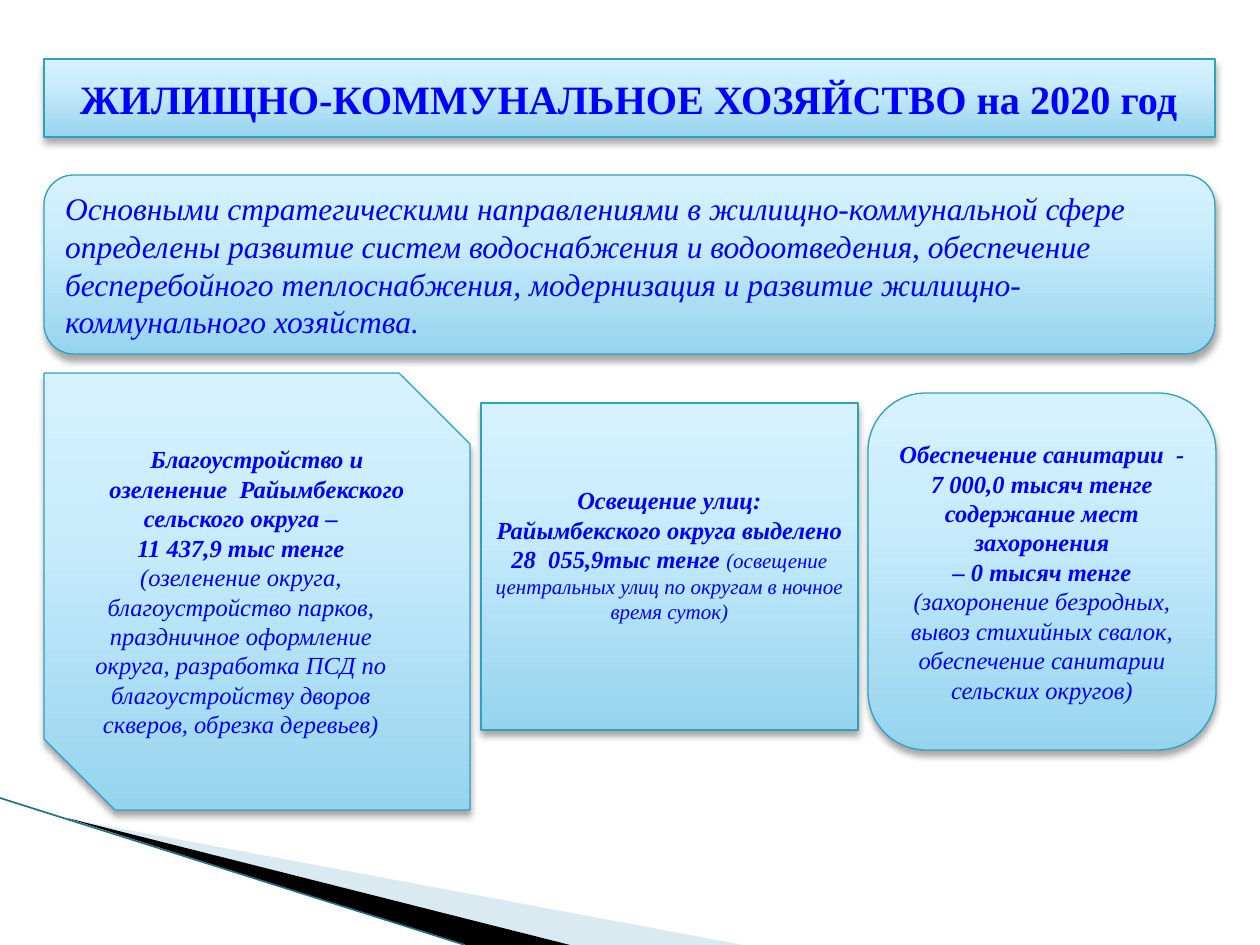
"""Build the slide on housing and communal services for 2020."""
from copy import deepcopy
from dataclasses import dataclass

from lxml.etree import SubElement
from pptx import Presentation
from pptx.dml.color import RGBColor
from pptx.enum.shapes import MSO_CONNECTOR, MSO_SHAPE
from pptx.enum.text import MSO_ANCHOR, PP_ALIGN
from pptx.oxml.ns import qn
from pptx.util import Emu, Pt

EMU_PER_PX = 914400 / 126


@dataclass(frozen=True)
class Theme:
    font: str = "Times New Roman"
    text: str = "0000FF"
    outline: str = "2DA2BF"
    gradient: tuple = ((0, "96D4EE"), (0.65, "C9ECFC"), (1, "D7F2FF"))
    shadow: str = "000000"
    light_wedge: str = "A0CBDC"
    dark_wedge: str = "000000"
    sweep_line: str = "1F7388"
    title: int = 23
    lead: int = 18
    body: int = 14
    note: int = 12


THEME = Theme()


@dataclass(frozen=True)
class Run:
    text: str
    size: int = THEME.body
    bold: bool = True
    italic: bool = True


@dataclass(frozen=True)
class Line:
    runs: tuple[Run, ...]
    right_indent: int = 0


@dataclass(frozen=True)
class Panel:
    preset: MSO_SHAPE
    left: int
    top: int
    width: int
    height: int
    lines: tuple[Line, ...]
    align: PP_ALIGN = PP_ALIGN.CENTER
    bottom_inset: int = 6


@dataclass(frozen=True)
class Wedge:
    points: tuple[tuple[int, int], ...]
    color: str
    opacity: int = 100


WEDGES = (
    Wedge(((69, 819), (743, 945), (570, 945)), THEME.light_wedge, 40),
    Wedge(((67, 818), (570, 945), (464, 945)), THEME.dark_wedge),
)

PANELS = (
    Panel(MSO_SHAPE.RECTANGLE, 44, 59, 1171, 78, (
        Line((Run("ЖИЛИЩНО-КОММУНАЛЬНОЕ ХОЗЯЙСТВО на 2020 год", THEME.title, italic=False),)),
    )),
    Panel(MSO_SHAPE.ROUNDED_RECTANGLE, 44, 175, 1171, 179, (
        Line((Run(
            "Основными стратегическими направлениями в жилищно-коммунальной сфере "
            "определены развитие систем водоснабжения и водоотведения, обеспечение "
            "бесперебойного теплоснабжения, модернизация и развитие "
            "жилищно-коммунального хозяйства.", THEME.lead, bold=False),)),
    ), PP_ALIGN.LEFT),
    Panel(MSO_SHAPE.RECTANGLE, 481, 403, 377, 327, (
        Line((Run("Освещение улиц:"),)),
        Line((
            Run("Райымбекского округа выделено 28  055,9тыс тенге "),
            Run("(освещение центральных улиц по округам в ночное время суток)",
                THEME.note, bold=False),
        )),
    ), bottom_inset=30),
    Panel(MSO_SHAPE.ROUNDED_RECTANGLE, 868, 393, 348, 357, (
        Line((Run("Обеспечение санитарии  - 7 000,0 тысяч тенге содержание мест захоронения"),)),
        Line((
            Run("– 0 тысяч тенге "),
            Run("(захоронение безродных, вывоз стихийных свалок, "
                "обеспечение санитарии сельских округов)", bold=False),
        )),
    )),
    Panel(MSO_SHAPE.SNIP_2_DIAG_RECTANGLE, 44, 373, 426, 437, (
        Line((Run("Благоустройство и озеленение  Райымбекского"),)),
        Line((Run("сельского округа –"),), right_indent=32),
        Line((Run("11 437,9 тыс тенге"),)),
        Line((Run(
            "(озеленение округа, благоустройство парков, праздничное оформление "
            "округа, разработка ПСД по благоустройству дворов скверов, "
            "обрезка деревьев)", bold=False),)),
    )),
)


def px(length: int) -> Emu:
    return Emu(round(length * EMU_PER_PX))


def add_text(paragraph, text: str, *, size: int, bold: bool, italic: bool) -> None:
    run = paragraph.add_run()
    run.text = text
    font = run.font
    font.name, font.size, font.bold, font.italic = THEME.font, Pt(size), bold, italic
    font.color.rgb = RGBColor.from_string(THEME.text)


def apply_gradient(shape) -> None:
    shape.fill.gradient()
    shape.fill.gradient_angle = 90
    stop_list = shape._element.spPr.find(".//" + qn("a:gsLst"))
    stop_list.append(deepcopy(stop_list[-1]))
    for stop, (position, color) in zip(shape.fill.gradient_stops, THEME.gradient):
        stop.position = position
        stop.color.rgb = RGBColor.from_string(color)


def apply_shadow(shape) -> None:
    shape.shadow.inherit = False
    effects = shape._element.spPr.find(qn("a:effectLst"))
    shadow = SubElement(effects, qn("a:outerShdw"), blurRad=str(Pt(4)), dist=str(Pt(3)),
                        dir="5400000", rotWithShape="0")
    color = SubElement(shadow, qn("a:srgbClr"), val=THEME.shadow)
    SubElement(color, qn("a:alpha"), val="35000")


def add_panel(slide, panel: Panel) -> None:
    shape = slide.shapes.add_shape(
        panel.preset, px(panel.left), px(panel.top), px(panel.width), px(panel.height))
    apply_gradient(shape)
    shape.line.color.rgb = RGBColor.from_string(THEME.outline)
    shape.line.width = Pt(0.75)
    apply_shadow(shape)
    frame = shape.text_frame
    frame.word_wrap = True
    frame.vertical_anchor = MSO_ANCHOR.MIDDLE
    frame.margin_bottom = px(panel.bottom_inset)
    for index, line in enumerate(panel.lines):
        paragraph = frame.add_paragraph() if index else frame.paragraphs[0]
        paragraph.alignment = panel.align
        if line.right_indent:
            paragraph._p.get_or_add_pPr().set("marR", str(px(line.right_indent)))
        for run in line.runs:
            add_text(paragraph, run.text, size=run.size, bold=run.bold, italic=run.italic)


def add_wedge(slide, wedge: Wedge) -> None:
    builder = slide.shapes.build_freeform(*wedge.points[0], scale=EMU_PER_PX)
    builder.add_line_segments(wedge.points[1:], close=True)
    shape = builder.convert_to_shape()
    shape.shadow.inherit = False
    shape.fill.solid()
    shape.fill.fore_color.rgb = RGBColor.from_string(wedge.color)
    shape.line.fill.background()
    if wedge.opacity < 100:
        color = shape._element.spPr.find(qn("a:solidFill")).find(qn("a:srgbClr"))
        SubElement(color, qn("a:alpha"), val=str(wedge.opacity * 1000))


def add_sweep_line(slide) -> None:
    connector = slide.shapes.add_connector(
        MSO_CONNECTOR.STRAIGHT, px(0), px(798), px(465), px(945))
    connector.line.color.rgb = RGBColor.from_string(THEME.sweep_line)
    connector.line.width = Pt(0.95)
    SubElement(connector._element.spPr, qn("a:effectLst"))


def main() -> None:
    presentation = Presentation()
    presentation.slide_width, presentation.slide_height = px(1260), px(945)
    slide = presentation.slides.add_slide(presentation.slide_layouts[6])
    for wedge in WEDGES:
        add_wedge(slide, wedge)
    add_sweep_line(slide)
    for panel in PANELS:
        add_panel(slide, panel)
    presentation.save("out.pptx")


if __name__ == "__main__":
    main()
